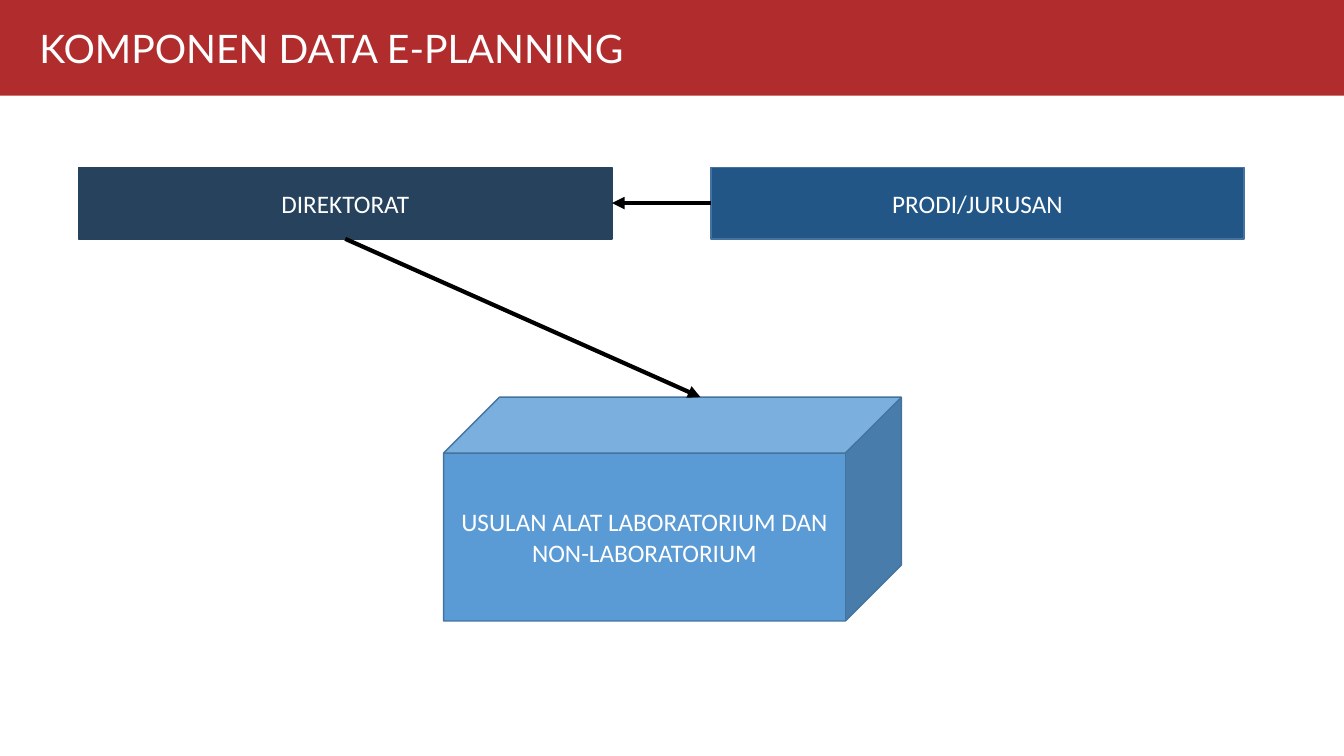
from lxml import etree
from pptx import Presentation
from pptx.dml.color import RGBColor
from pptx.enum import shapes, text
from pptx.oxml import ns
from pptx.util import Inches, Pt

WHITE = RGBColor(0xFF, 0xFF, 0xFF)
BLACK = RGBColor(0, 0, 0)
RED = RGBColor(0xB1, 0x2D, 0x2D)
NAVY = RGBColor(0x26, 0x42, 0x5C)
BLUE = RGBColor(0x22, 0x56, 0x86)
SKY = RGBColor(0x5B, 0x9B, 0xD5)
EDGE = RGBColor(0x43, 0x73, 0x9E)

RECTANGLE = shapes.MSO_SHAPE.RECTANGLE
CUBE = shapes.MSO_SHAPE.CUBE
TOP, LEFT, BOTTOM, RIGHT = range(4)


def add_block(slide, kind, box, label, fill, edge=None, font="Calibri", size=18):
    block = slide.shapes.add_shape(kind, *map(Inches, box))
    block.shadow.inherit = False
    block.fill.solid()
    block.fill.fore_color.rgb = fill
    if edge is None:
        block.line.fill.background()
    else:
        block.line.color.rgb = edge
        block.line.width = Pt(1)
    frame = block.text_frame
    frame.word_wrap = True
    frame.vertical_anchor = text.MSO_ANCHOR.MIDDLE
    paragraph = frame.paragraphs[0]
    paragraph.text = label
    paragraph.alignment = text.PP_ALIGN.CENTER
    paragraph.font.name = font
    paragraph.font.size = Pt(size)
    paragraph.font.color.rgb = WHITE
    return block


def add_arrow(slide, start, end):
    arrow = slide.shapes.add_connector(
        shapes.MSO_CONNECTOR.STRAIGHT, *map(Inches, start + end))
    arrow.line.color.rgb = BLACK
    arrow.line.width = Pt(3)
    etree.SubElement(arrow.line._get_or_add_ln(), ns.qn("a:tailEnd"), type="triangle")
    etree.SubElement(arrow._element.spPr, ns.qn("a:effectLst"))
    return arrow


def add_title_band(slide, box):
    band = add_block(slide, RECTANGLE, box, "KOMPONEN DATA E-PLANNING",
                     RED, font="Lato", size=28)
    frame = band.text_frame
    frame.margin_left = frame.margin_right = Inches(0.39)
    frame.margin_top = frame.margin_bottom = Inches(0.24)
    frame.vertical_anchor = text.MSO_ANCHOR.TOP
    frame.paragraphs[0].alignment = text.PP_ALIGN.LEFT


def add_proposal_flow(slide, box):
    left, top, width, height = box
    unit_width, unit_height = 5.29, 0.71
    cube_width, cube_height = 4.54, 2.22
    cube_left, cube_top = left + 3.62, top + height - cube_height
    program_left = left + width - unit_width
    middle = top + unit_height / 2

    directorate = add_block(slide, RECTANGLE, (left, top, unit_width, unit_height),
                            "DIREKTORAT", NAVY, NAVY)
    program = add_block(slide, RECTANGLE, (program_left, top, unit_width, unit_height),
                        "PRODI/JURUSAN", BLUE, EDGE)
    add_block(slide, CUBE, (cube_left, cube_top, cube_width, cube_height),
              "USULAN ALAT LABORATORIUM DAN NON-LABORATORIUM", SKY, EDGE)

    cube_depth = cube_height / 4
    to_proposal = add_arrow(slide, (left + unit_width / 2, top + unit_height),
                            (cube_left + (cube_width + cube_depth) / 2, cube_top))
    to_proposal.begin_connect(directorate, BOTTOM)
    to_directorate = add_arrow(slide, (program_left, middle), (left + unit_width, middle))
    to_directorate.begin_connect(program, LEFT)
    to_directorate.end_connect(directorate, RIGHT)


def main():
    deck = Presentation()
    deck.slide_width, deck.slide_height = Inches(13.33), Inches(7.5)
    slide = deck.slides.add_slide(deck.slide_layouts[6])
    add_title_band(slide, (0, 0, 13.33, 0.95))
    add_proposal_flow(slide, (0.78, 1.66, 11.56, 4.5))
    deck.save("out.pptx")


if __name__ == "__main__":
    main()
